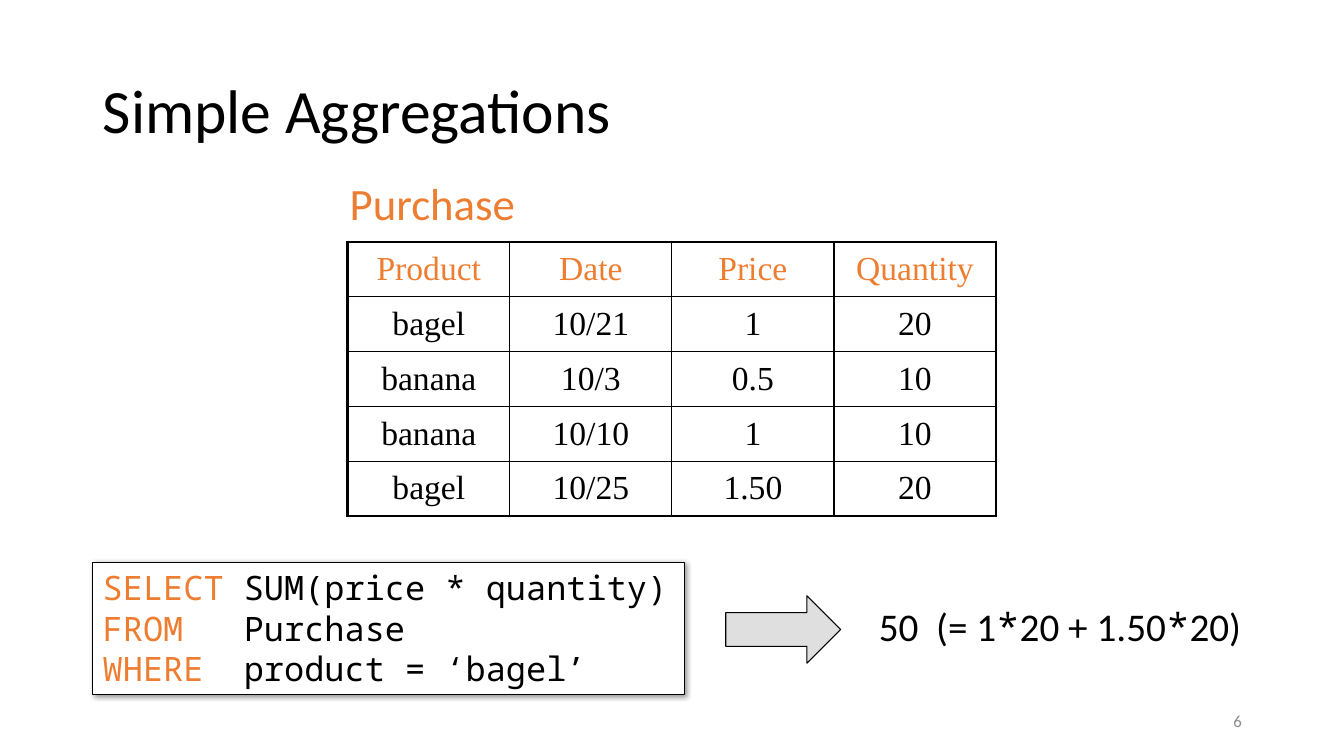
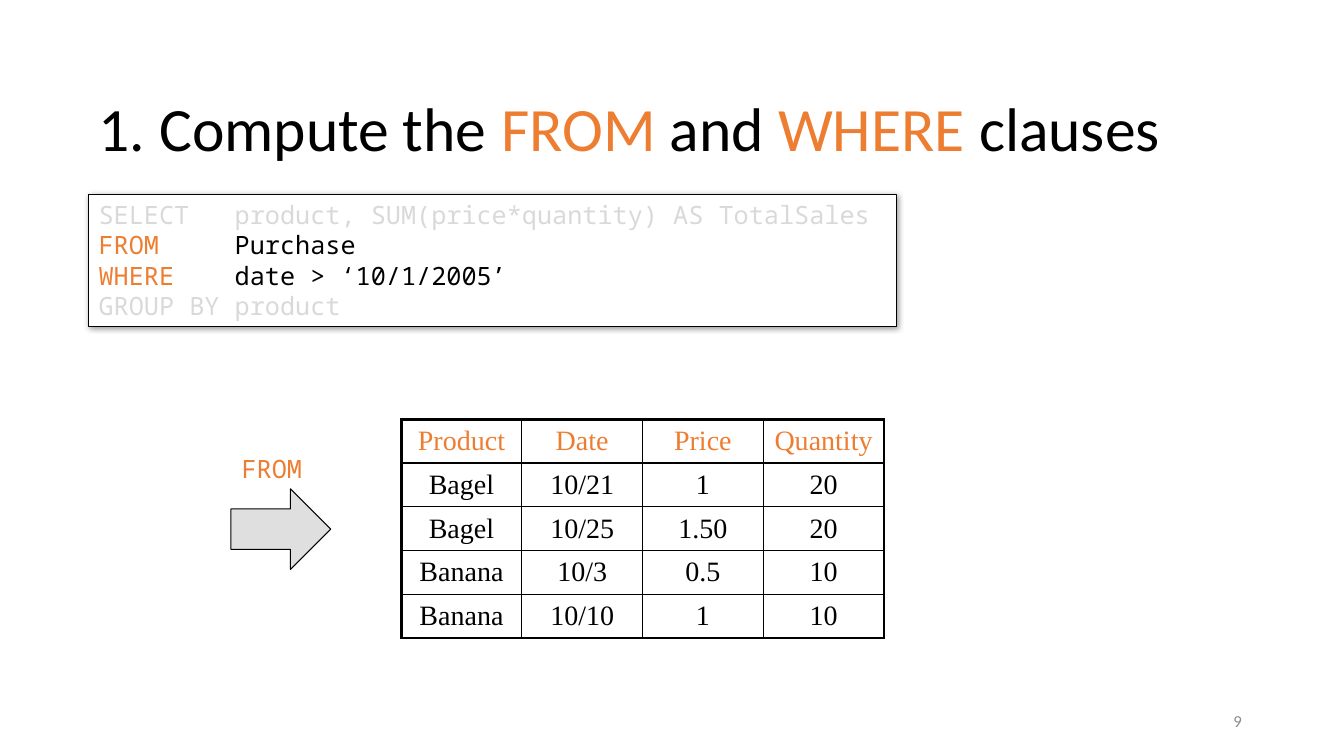
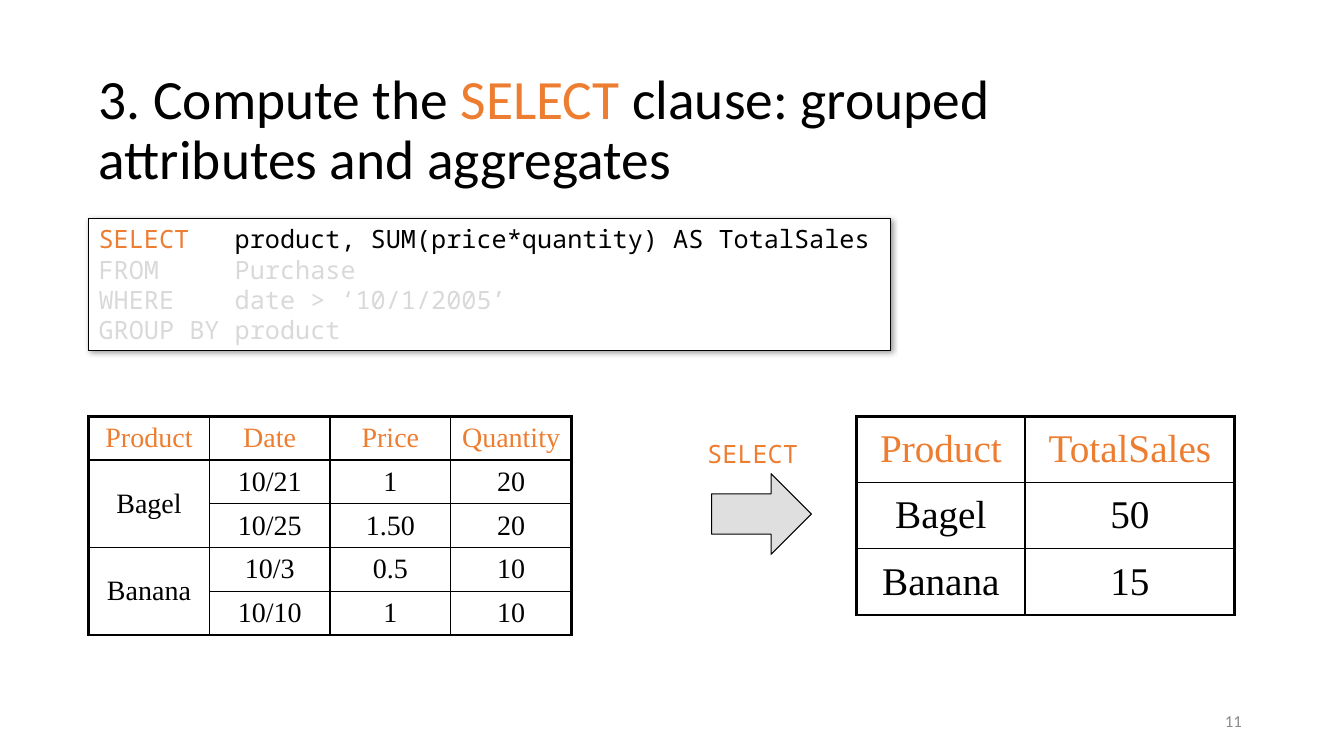
import pptx
import pptx.util
import pptx.oxml
import pptx.oxml.ns
import pptx.dml.color
import pptx.enum.shapes
import pptx.enum.text

Pt = pptx.util.Pt
RGB = pptx.dml.color.RGBColor
ALIGN = pptx.enum.text.PP_ALIGN
ANCHOR = pptx.enum.text.MSO_ANCHOR
FIT = pptx.enum.text.MSO_AUTO_SIZE
SHAPE = pptx.enum.shapes.MSO_SHAPE
qn = pptx.oxml.ns.qn

# Shared look
BLACK = RGB(0x00, 0x00, 0x00)
WHITE = RGB(0xFF, 0xFF, 0xFF)
ORANGE = RGB(0xED, 0x7D, 0x31)
MUTED = RGB(0xD9, 0xD9, 0xD9)
SILVER = RGB(0xC0, 0xC0, 0xC0)
GREY = RGB(0x8C, 0x8C, 0x8C)
SANS, MONO, SERIF = "Calibri", "Noto Sans Mono", "Times New Roman"
WIDE, HIGH = pptx.util.Inches(13.333), pptx.util.Inches(7.5)
THICK, THIN = 2.25, 1

# Boxes are (left, top, width, height) in percent of the slide
NUMBER = (70.65, 92.67, 22.5, 5.33)
HEADING = (6.6, 9.07, 82.43, 16.67)

HEAD = ["Product", "Date", "Price", "Quantity"]
QUERY = [
    ("SELECT", "product, SUM(price*quantity) AS TotalSales"),
    ("FROM", "Purchase"),
    ("WHERE", "date > ‘10/1/2005’"),
    ("GROUP BY", "product"),
]


def place(box):
    """Turn a box in percent into lengths."""
    return [int(part * full / 100) for part, full in zip(box, (WIDE, HIGH) * 2)]


def write(para, runs, size, font=SANS):
    """Add runs given as (text, colour) or (text, colour, font)."""
    for text, color, *face in runs:
        run = para.add_run()
        run.text = text
        run.font.size = Pt(size)
        run.font.name = face[0] if face else font
        run.font.color.rgb = color


def title(slide, runs, size=44, box=HEADING):
    head = slide.shapes.title
    head.left, head.top, head.width, head.height = place(box)
    frame = head.text_frame
    frame.auto_size = FIT.NONE
    frame.vertical_anchor = ANCHOR.MIDDLE
    para = frame.paragraphs[0]
    para.alignment = ALIGN.LEFT
    para.line_spacing = 0.9
    write(para, runs, size)


def label(slide, box, runs, size, font=SANS, align=ALIGN.LEFT, anchor=ANCHOR.TOP):
    frame = slide.shapes.add_textbox(*place(box)).text_frame
    frame.word_wrap = False
    frame.vertical_anchor = anchor
    frame.paragraphs[0].alignment = align
    write(frame.paragraphs[0], runs, size, font)


def block(slide, kind, box, fill):
    """Outlined preset shape with a plain fill."""
    shape = slide.shapes.add_shape(kind, *place(box))
    shape.shadow.inherit = False
    shape.fill.solid()
    shape.fill.fore_color.rgb = fill
    shape.line.color.rgb = BLACK
    shape.line.width = Pt(0.75)
    return shape


def arrow(slide, box):
    shape = block(slide, SHAPE.RIGHT_ARROW, box, SILVER)
    color = shape._element.spPr.find(qn("a:solidFill")).find(qn("a:srgbClr"))
    color.append(pptx.oxml.parse_xml(
        f'<a:alpha {pptx.oxml.ns.nsdecls("a")} val="50000"/>'))


def step(slide, box, word):
    """Arrow with the clause name above it: one third label, two thirds arrow."""
    x, y, w, h = box
    label(slide, (x - 0.15 * w, y, 1.12 * w, h / 3), [(word, ORANGE)], 18, MONO,
          ALIGN.CENTER)
    arrow(slide, (x, y + h / 3, w, h * 2 / 3))


def code(slide, box, lines, size, pad, live):
    """Query box; clauses outside live are muted."""
    shape = block(slide, SHAPE.RECTANGLE, box, WHITE)
    shape._element.spPr.find(qn("a:effectLst")).append(pptx.oxml.parse_xml(
        f'<a:outerShdw {pptx.oxml.ns.nsdecls("a")} blurRad="50800" dist="12700" '
        'dir="2700000" algn="tl" rotWithShape="0"><a:srgbClr val="000000">'
        '<a:alpha val="40000"/></a:srgbClr></a:outerShdw>'))
    frame = shape.text_frame
    frame.word_wrap = True
    frame.vertical_anchor = ANCHOR.TOP
    for i, (key, rest) in enumerate(lines):
        para = frame.add_paragraph() if i else frame.paragraphs[0]
        para.alignment = ALIGN.LEFT
        tones = (ORANGE, BLACK) if key in live else (MUTED, MUTED)
        write(para, zip((key.ljust(pad), rest), tones), size, MONO)


def edge(cell, widths):
    """Border widths in points, in the order left, right, top, bottom."""
    props = cell._tc.get_or_add_tcPr()
    for i, (side, width) in enumerate(zip("LRTB", widths)):
        props.insert(i, pptx.oxml.parse_xml(
            f'<a:ln{side} {pptx.oxml.ns.nsdecls("a")} w="{Pt(width)}">'
            f'<a:solidFill><a:srgbClr val="{BLACK}"/></a:solidFill></a:ln{side}>'))


def grid(slide, box, rows, size, shares=None):
    """Table with a thick frame; None joins a cell to the one above."""
    tall, wide = len(rows), len(rows[0])
    spot = place(box)
    table = slide.shapes.add_table(tall, wide, *spot).table
    table.first_row = table.horz_banding = False
    for col, share in zip(table.columns, shares or [1 / wide] * wide):
        col.width = int(spot[2] * share)
    for row in table.rows:
        row.height = spot[3] // tall
    for r, row in enumerate(rows):
        for c, text in enumerate(row):
            cell = table.cell(r, c)
            cell.fill.background()
            outer = (c == 0, c == wide - 1, r == 0, r == tall - 1)
            edge(cell, [THICK if out else THIN for out in outer])
            if text is None:
                table.cell(r - 1, c).merge(cell)
                continue
            cell.vertical_anchor = ANCHOR.MIDDLE
            para = cell.text_frame.paragraphs[0]
            para.alignment = ALIGN.CENTER
            write(para, [(text, BLACK if r else ORANGE)], size, SERIF)


def start(deck, number):
    """New title-only slide with its page number."""
    slide = deck.slides.add_slide(deck.slide_layouts[5])
    label(slide, NUMBER, [(number, GREY)], 12, align=ALIGN.RIGHT,
          anchor=ANCHOR.MIDDLE)
    return slide


def simple(deck):
    slide = start(deck, "6")
    title(slide, [("Simple Aggregations", BLACK)], box=(6.9, 5.33, 86.25, 19.33))
    label(slide, (25.28, 22.53, 13.95, 8.53), [("Purchase", ORANGE)], 32)
    grid(slide, (25.88, 32, 48.23, 36.27), [
        HEAD,
        ["bagel", "10/21", "1", "20"],
        ["banana", "10/3", "0.5", "10"],
        ["banana", "10/10", "1", "10"],
        ["bagel", "10/25", "1.50", "20"],
    ], 24)
    code(slide, (6.9, 74.4, 44.03, 17.47), [
        ("SELECT", "SUM(price * quantity)"),
        ("FROM", "Purchase"),
        ("WHERE", "product = ‘bagel’"),
    ], 24, 7, ("SELECT", "FROM", "WHERE"))
    arrow(slide, (54, 78.8, 8.55, 8.93))
    label(slide, (64.65, 79.07, 28.8, 7.6), [
        ("50  (= 1", BLACK), ("*", BLACK, MONO), ("20 + 1.50", BLACK),
        ("*", BLACK, MONO), ("20)", BLACK)], 28)


def source(deck):
    slide = start(deck, "9")
    title(slide, [("1. Compute the ", BLACK), ("FROM", ORANGE), (" and ", BLACK),
                  ("WHERE", ORANGE), (" clauses", BLACK)])
    code(slide, (6.6, 25.73, 60.08, 17.47), QUERY, 18, 9, ("FROM", "WHERE"))
    step(slide, (17.18, 59.33, 7.43, 16), "FROM")
    grid(slide, (29.85, 55.47, 35.93, 28.13), [
        HEAD,
        ["Bagel", "10/21", "1", "20"],
        ["Bagel", "10/25", "1.50", "20"],
        ["Banana", "10/3", "0.5", "10"],
        ["Banana", "10/10", "1", "10"],
    ], 20)


def result(deck):
    slide = start(deck, "11")
    title(slide, [("3. Compute the ", BLACK), ("SELECT", ORANGE),
                  (" clause: grouped attributes and aggregates", BLACK)], 39.6)
    code(slide, (6.6, 28.93, 59.63, 17.47), QUERY, 18, 9, ("SELECT",))
    grid(slide, (6.6, 55.07, 35.93, 28.93), [
        HEAD,
        ["Bagel", "10/21", "1", "20"],
        [None, "10/25", "1.50", "20"],
        ["Banana", "10/3", "0.5", "10"],
        [None, "10/10", "1", "10"],
    ], 20)
    step(slide, (52.95, 57.33, 7.43, 16), "SELECT")
    grid(slide, (63.75, 55.07, 28.13, 26.27), [
        ["Product", "TotalSales"], ["Bagel", "50"], ["Banana", "15"],
    ], 28, (0.445, 0.555))


def main():
    deck = pptx.Presentation()
    deck.slide_width, deck.slide_height = WIDE, HIGH
    for build in (simple, source, result):
        build(deck)
    deck.save("out.pptx")


if __name__ == "__main__":
    main()
